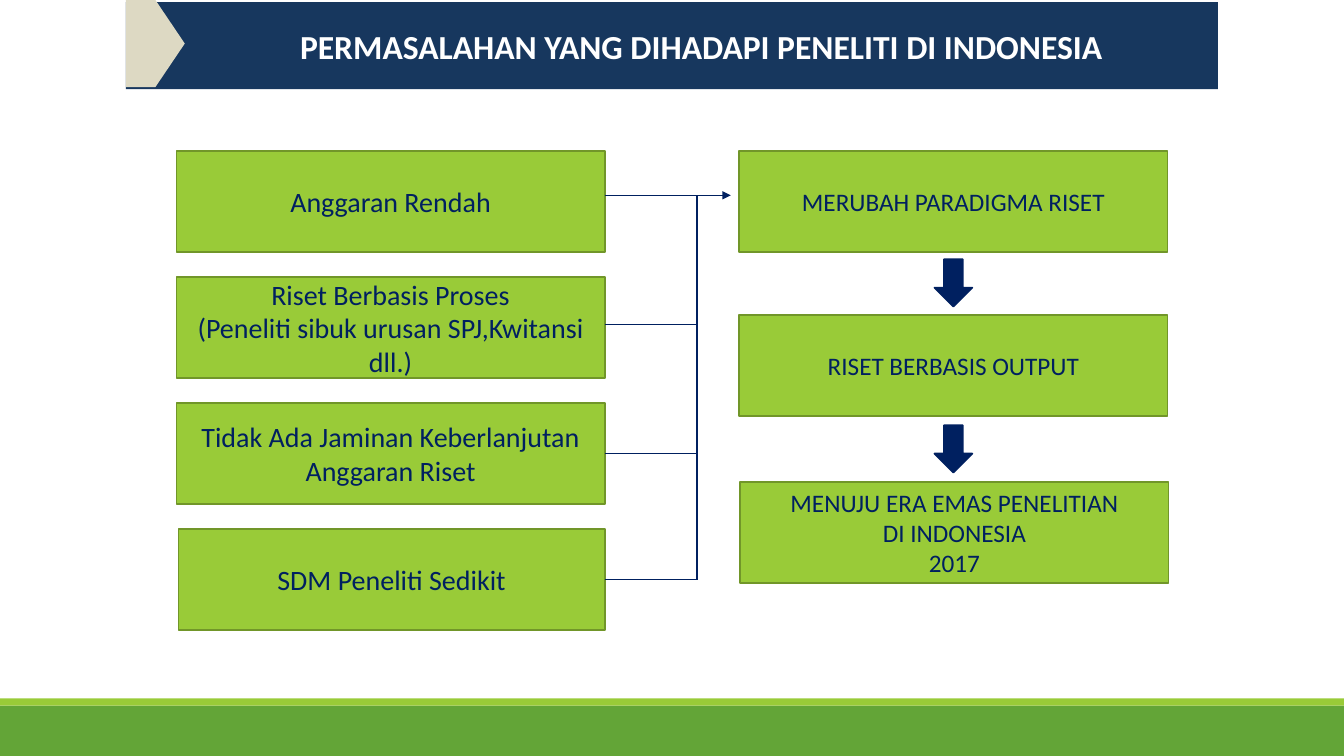
"""Build the slide on the problems facing researchers in Indonesia."""
from dataclasses import dataclass

from lxml import etree
from pptx import Presentation
from pptx.dml.color import RGBColor
from pptx.enum.shapes import MSO_CONNECTOR, MSO_SHAPE
from pptx.enum.text import MSO_ANCHOR, PP_ALIGN
from pptx.oxml.ns import qn
from pptx.util import Emu, Pt

PX = 9525
RECTANGLE = MSO_SHAPE.RECTANGLE
PENTAGON = MSO_SHAPE.PENTAGON
DOWN_ARROW = MSO_SHAPE.DOWN_ARROW
STRAIGHT = MSO_CONNECTOR.STRAIGHT
MIDDLE = MSO_ANCHOR.MIDDLE
CENTER = PP_ALIGN.CENTER
RIGHT_SIDE = 3
COLOURS = {
    "footer": "63A537",
    "lime": "99CB38",
    "lime_edge": "719629",
    "banner": "17375E",
    "tag": "DDD9C3",
    "navy": "002060",
    "white": "FFFFFF",
}


@dataclass
class Block:
    left: int
    top: int
    width: int
    height: int
    fill: str
    line: str = ""
    preset: int = RECTANGLE


@dataclass
class Label:
    text: str
    size: int
    colour: str = "navy"
    bold: bool = False


@dataclass
class Rule:
    start: tuple[int, int]
    end: tuple[int, int]
    arrow: bool = False


BOX_WIDTH, BOX_HEIGHT = 408, 96
PROBLEM_RIGHT, TRUNK = 576, 664
PROBLEM_TOP, PROBLEM_STEP = 144, 120

DECORATION = [
    Block(0, 672, 1280, 48, "footer"),
    Block(0, 665, 1280, 7, "lime"),
    Block(120, 2, 1040, 83, "banner"),
    Block(120, 0, 56, 83, "tag", preset=PENTAGON),
]
TITLE = Label("PERMASALAHAN YANG DIHADAPI PENELITI DI INDONESIA", 24, "white", True)
PROBLEMS = [
    (168, "Anggaran Rendah"),
    (168, "Riset Berbasis Proses\n(Peneliti sibuk urusan SPJ,Kwitansi dll.)"),
    (168, "Tidak Ada Jaminan Keberlanjutan Anggaran Riset"),
    (170, "SDM Peneliti Sedikit"),
]
GOALS = [
    (704, 144, "MERUBAH PARADIGMA RISET"),
    (704, 300, "RISET BERBASIS OUTPUT"),
    (705, 459, "MENUJU ERA EMAS PENELITIAN\nDI INDONESIA\n2017"),
]
ARROW_TOPS = [247, 405]
BRANCH_HEIGHTS = [186, 309, 432, 552]


def colour(name: str) -> RGBColor:
    """Return the named colour."""
    return RGBColor.from_string(COLOURS[name])


def write(shape, label: Label) -> None:
    """Write centred paragraphs into a shape."""
    frame = shape.text_frame
    frame.word_wrap = True
    frame.vertical_anchor = MIDDLE
    frame.text = label.text
    formats = {"name": "Calibri", "size": Pt(label.size), "bold": label.bold}
    for para in frame.paragraphs:
        para.alignment = CENTER
        for span in para.runs:
            for key, value in formats.items():
                setattr(span.font, key, value)
            span.font.color.rgb = colour(label.colour)


def draw_block(page, block: Block):
    """Draw a filled preset shape."""
    bounds = (block.left, block.top, block.width, block.height)
    box = page.shapes.add_shape(block.preset, *(Emu(value * PX) for value in bounds))
    box.shadow.inherit = False
    box.fill.solid()
    box.fill.fore_color.rgb = colour(block.fill)
    if block.line:
        box.line.color.rgb = colour(block.line)
        box.line.width = Pt(1.25)
    else:
        box.line.fill.background()
    return box


def draw_box(page, left: int, top: int, width: int, label: Label):
    """Draw a lime box with its label."""
    box = draw_block(page, Block(left, top, width, BOX_HEIGHT, "lime", "lime_edge"))
    write(box, label)
    return box


def draw_rule(page, rule: Rule):
    """Draw a thin navy connector."""
    ends = (Emu(value * PX) for value in (*rule.start, *rule.end))
    connector = page.shapes.add_connector(STRAIGHT, *ends)
    connector.line.color.rgb = colour("navy")
    connector.line.width = Pt(1)
    if rule.arrow:
        line = connector.line._get_or_add_ln()
        etree.SubElement(line, qn("a:tailEnd"), type="triangle")
    etree.SubElement(connector._element.spPr, qn("a:effectLst"))
    return connector


def main() -> None:
    """Assemble and save the slide."""
    deck = Presentation()
    deck.slide_width, deck.slide_height = Emu(1280 * PX), Emu(720 * PX)
    page = deck.slides.add_slide(deck.slide_layouts[6])

    for block in DECORATION:
        draw_block(page, block)
    title = page.shapes.add_textbox(*(Emu(value * PX) for value in (176, 20, 984, 48)))
    write(title, TITLE)

    problem_boxes = []
    for row, (left, text) in enumerate(PROBLEMS):
        top = PROBLEM_TOP + row * PROBLEM_STEP
        box = draw_box(page, left, top, PROBLEM_RIGHT - left, Label(text, 20))
        problem_boxes.append((box, top + BOX_HEIGHT // 2))

    draw_rule(page, Rule((TRUNK, BRANCH_HEIGHTS[0]), (TRUNK, BRANCH_HEIGHTS[-1])))
    for row, ((box, middle), height) in enumerate(zip(problem_boxes, BRANCH_HEIGHTS)):
        first = row == 0
        end = 696 if first else TRUNK
        branch = draw_rule(page, Rule((PROBLEM_RIGHT, height), (end, height), first))
        if height == middle:
            branch.begin_connect(box, RIGHT_SIDE)

    for left, top, text in GOALS:
        draw_box(page, left, top, BOX_WIDTH, Label(text, 18))
    for top in ARROW_TOPS:
        draw_block(page, Block(890, top, 36, 45, "navy", "navy", DOWN_ARROW))

    deck.save("out.pptx")


if __name__ == "__main__":
    main()
